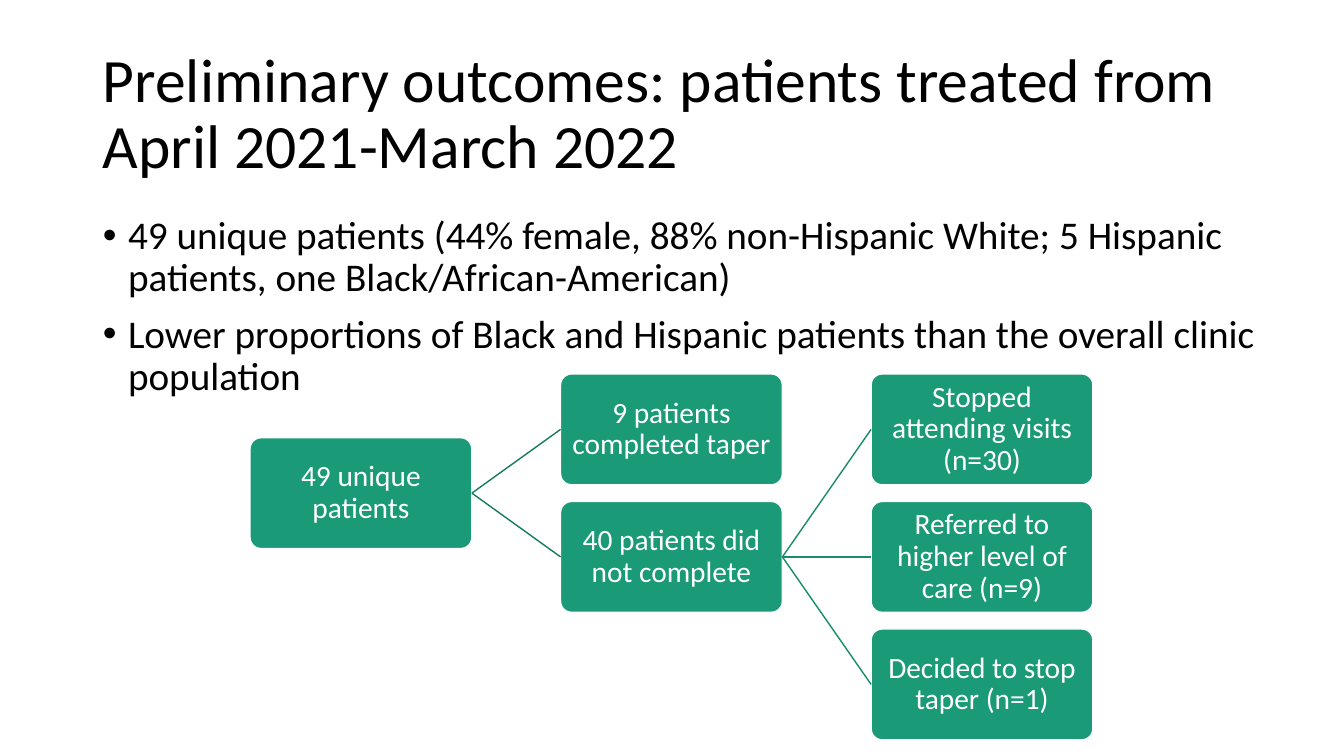
from pptx import Presentation
from pptx import util as u
from pptx.dml.color import RGBColor
from pptx.enum import shapes, text
from pptx.oxml.ns import qn
from lxml import etree

FONT = "Calibri"
BLACK, WHITE, GREEN = "000000", "FFFFFF", "1A9A76"
LINK_COLORS = ["167A5F", "178B6A"]
TITLE = "Preliminary outcomes: patients treated from April 2021-March 2022"
FINDINGS = [
    "49 unique patients (44% female, 88% non-Hispanic White; 5 Hispanic patients, one Black/African-American)",
    "Lower proportions of Black and Hispanic patients than the overall clinic population",
]
OUTCOMES = [
    ("49 unique patients", 0, 0.5, None),
    ("9 patients completed taper", 1, 0, 0),
    ("40 patients did not complete", 1, 1, 0),
    ("Stopped attending visits (n=30)", 2, 0, 2),
    ("Referred to higher level of care (n=9)", 2, 1, 2),
    ("Decided to stop taper (n=1)", 2, 2, 2),
]


def rgb(value):
    """Return the colour for a hex string."""
    return RGBColor.from_string(value)


def place(shape, box):
    """Move a shape to a box of left, top, width and height in inches."""
    shape.left, shape.top, shape.width, shape.height = map(u.Inches, box)


def style(paragraph, size, color, align):
    """Set the font, alignment and line spacing of a paragraph."""
    paragraph.font.name = FONT
    paragraph.font.size = u.Pt(size)
    paragraph.font.color.rgb = rgb(color)
    paragraph.alignment = align
    paragraph.line_spacing = 0.9


def add_title(slide, box):
    """Fill the title placeholder."""
    title = slide.shapes.title
    place(title, box)
    frame = title.text_frame
    frame.text = TITLE
    frame.auto_size = text.MSO_AUTO_SIZE.NONE
    frame.vertical_anchor = text.MSO_ANCHOR.MIDDLE
    style(frame.paragraphs[0], 44, BLACK, text.PP_ALIGN.LEFT)


def add_findings(slide, box):
    """Fill the body placeholder with the bulleted findings."""
    findings = slide.placeholders[1]
    place(findings, box)
    frame = findings.text_frame
    frame.text = "\n".join(FINDINGS)
    frame.auto_size = text.MSO_AUTO_SIZE.NONE
    for index, finding in enumerate(frame.paragraphs):
        style(finding, 28, BLACK, text.PP_ALIGN.LEFT)
        finding.space_before = u.Pt(10 if index else 0)
        properties = finding._p.get_or_add_pPr()
        properties.set("marL", str(u.Inches(0.25)))
        properties.set("indent", str(u.Inches(-0.25)))


def add_outcome(slide, label, box):
    """Draw one rounded outcome box with its label."""
    outcome = slide.shapes.add_shape(
        shapes.MSO_SHAPE.ROUNDED_RECTANGLE, *map(u.Inches, box))
    outcome.adjustments[0] = 0.1
    outcome.shadow.inherit = False
    outcome.fill.solid()
    outcome.fill.fore_color.rgb = rgb(GREEN)
    outcome.line.color.rgb = rgb(WHITE)
    outcome.line.width = u.Pt(1)
    frame = outcome.text_frame
    frame.text = label
    frame.word_wrap = True
    frame.vertical_anchor = text.MSO_ANCHOR.MIDDLE
    frame.margin_left = frame.margin_right = u.Inches(0.01)
    frame.margin_top = frame.margin_bottom = u.Inches(0.01)
    style(frame.paragraphs[0], 21, WHITE, text.PP_ALIGN.CENTER)
    return outcome


def add_link(slide, parent, child, color):
    """Join the right side of a parent to the left side of its child."""
    link = slide.shapes.add_connector(shapes.MSO_CONNECTOR.STRAIGHT, 0, 0, 0, 0)
    link.begin_connect(parent, 3)
    link.end_connect(child, 1)
    link.line.color.rgb = rgb(color)
    link.line.width = u.Pt(1)
    etree.SubElement(link._element.spPr, qn("a:effectLst"))


def add_outcome_tree(slide, box):
    """Draw the tree of outcomes in three columns and three rows."""
    left, top, width, height = box
    node_width, node_height = 2.2, 1.1
    column_step = (width - node_width) / 2
    row_step = (height - node_height) / 2
    nodes = []
    for label, column, row, parent in OUTCOMES:
        node = add_outcome(slide, label, (
            left + column * column_step, top + row * row_step,
            node_width, node_height))
        nodes.append(node)
        if parent is not None:
            add_link(slide, nodes[parent], node, LINK_COLORS[column - 1])


def main():
    """Build and save the slide."""
    deck = Presentation()
    deck.slide_width, deck.slide_height = u.Inches(13.33), u.Inches(7.5)
    slide = deck.slides.add_slide(deck.slide_layouts[1])
    add_title(slide, (0.92, 0.42, 11.5, 1.45))
    add_findings(slide, (0.92, 2.09, 11.75, 4.82))
    add_outcome_tree(slide, (2.48, 3.71, 8.36, 3.63))
    deck.save("out.pptx")


if __name__ == "__main__":
    main()
